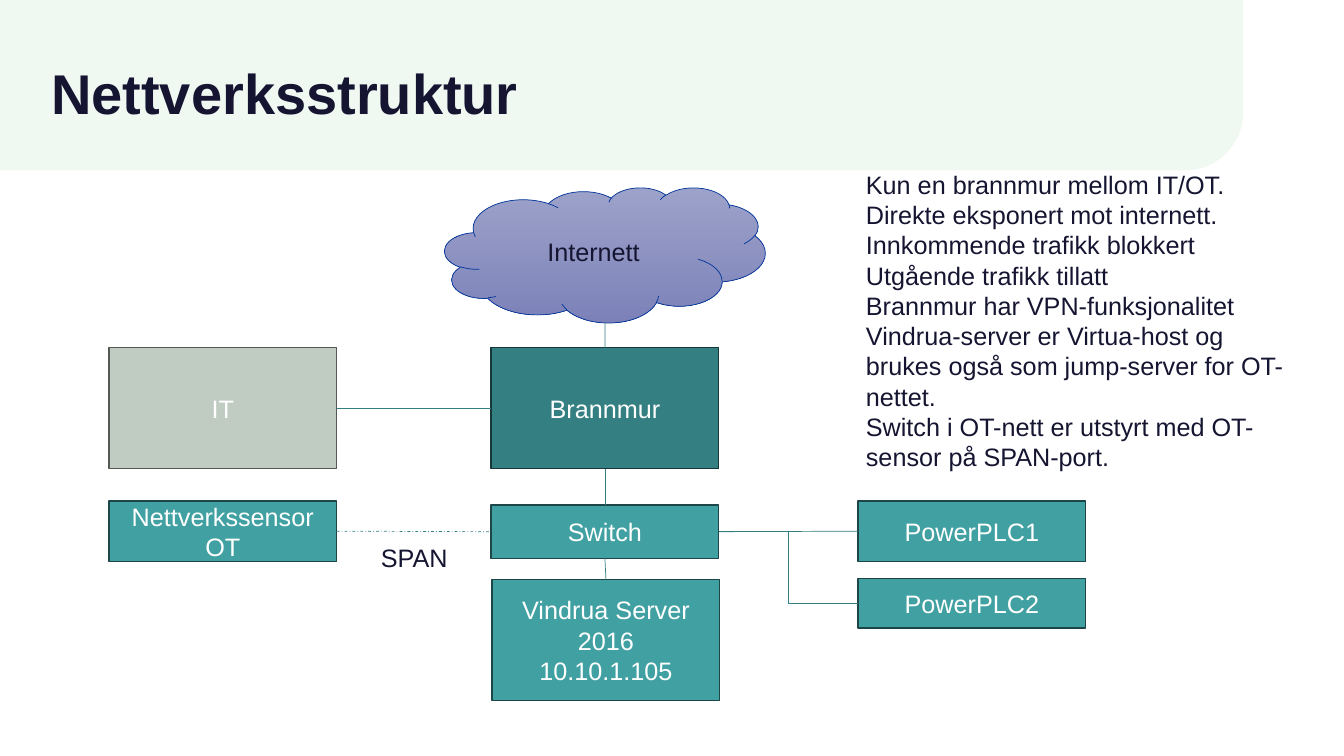
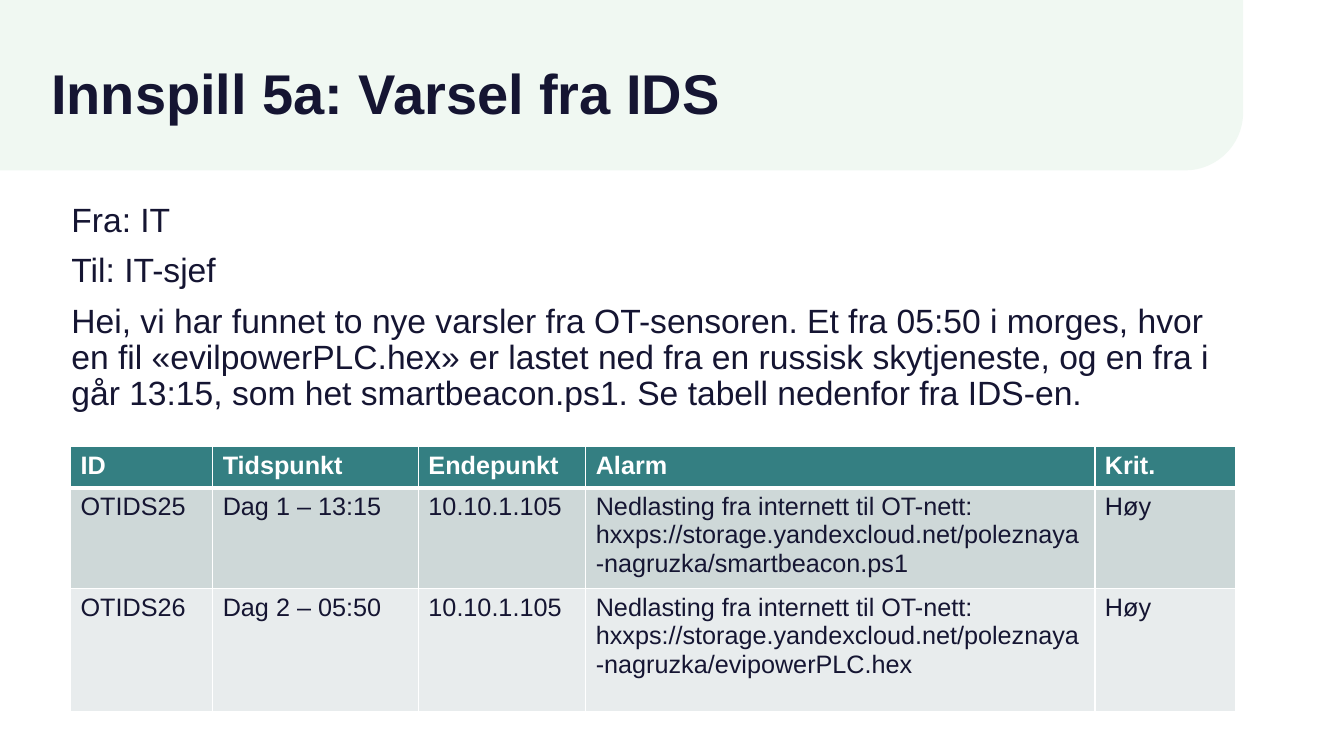
from lxml import etree
from pptx import Presentation
from pptx.dml.color import RGBColor
from pptx.enum.dml import MSO_LINE
from pptx.enum.shapes import MSO_CONNECTOR as CONN, MSO_SHAPE as SHAPE
from pptx.enum.text import MSO_ANCHOR as ANCHOR, PP_ALIGN as ALIGN
from pptx.oxml.ns import qn
from pptx.util import Inches, Pt

FONT = "Arial"
INK, WHITE, MINT = "151532", "FFFFFF", "F0F8F2"
DARK_TEAL, TEAL, GREY = "347F82", "41A0A2", "C0CBC2"
TEAL_EDGE = "1C4647"
ROW_FILLS = ["CED8D8", "E8ECED"]
TOP, LEFT, BOTTOM, RIGHT = range(4)


def rgb(value):
    return RGBColor.from_string(value)


def write(tf, text, size=18, color=INK, bold=False, align=None,
          anchor=ANCHOR.TOP, spacing=None, before=0, indent=0, wrap=True):
    """Fill a text frame, one paragraph per line of text."""
    tf.word_wrap = wrap
    tf.vertical_anchor = anchor
    for i, line in enumerate(text.split("\n")):
        p = tf.paragraphs[0] if i == 0 else tf.add_paragraph()
        if indent:
            p._p.get_or_add_pPr().set("marL", str(Inches(indent)))
        if align is not None:
            p.alignment = align
        if spacing:
            p.line_spacing = spacing
        if before and i:
            p.space_before = Pt(before)
        r = p.add_run()
        r.text = line
        r.font.name = FONT
        r.font.size = Pt(size)
        r.font.bold = bold
        r.font.color.rgb = rgb(color)


def add_text(slide, x, y, w, h, text, **fmt):
    sp = slide.shapes.add_textbox(Inches(x), Inches(y), Inches(w), Inches(h))
    write(sp.text_frame, text, **fmt)
    return sp


def add_shape(slide, kind, x, y, w, h, fill, edge=None, width=1):
    sp = slide.shapes.add_shape(kind, Inches(x), Inches(y), Inches(w), Inches(h))
    sp.shadow.inherit = False
    if isinstance(fill, tuple):
        sp.fill.gradient()
        sp.fill.gradient_angle = 270
        for stop, color, pos in zip(sp.fill.gradient_stops, fill, (0, 1)):
            stop.color.rgb = rgb(color)
            stop.position = pos
    else:
        sp.fill.solid()
        sp.fill.fore_color.rgb = rgb(fill)
    if edge:
        sp.line.color.rgb = rgb(edge)
        sp.line.width = Pt(width)
    else:
        sp.line.fill.background()
    return sp


def add_node(slide, x, y, h, text, fill=TEAL, edge=TEAL_EDGE):
    """Labelled box; all boxes in the network share one width."""
    sp = add_shape(slide, SHAPE.RECTANGLE, x, y, 2.26, h, fill, edge)
    write(sp.text_frame, text, color=WHITE, align=ALIGN.CENTER,
          anchor=ANCHOR.MIDDLE)
    return sp


def add_link(slide, start, side, end, end_side=None, kind=CONN.STRAIGHT, dash=None):
    """Line from a side of a box to a side of another, or to a point."""
    x, y = (0, 0) if end_side is not None else map(Inches, end)
    line = slide.shapes.add_connector(kind, 0, 0, x, y)
    line.begin_connect(start, side)
    if end_side is not None:
        line.end_connect(end, end_side)
    line.line.color.rgb = rgb(DARK_TEAL)
    line.line.width = Pt(0.5)
    if dash:
        line.line.dash_style = dash
    etree.SubElement(line._element.spPr, qn("a:effectLst"))


def add_slide(prs, title):
    """Blank slide with the mint title band."""
    slide = prs.slides.add_slide(prs.slide_layouts[6])
    band = add_shape(slide, SHAPE.ROUND_1_RECTANGLE, 0, 0, 12.33, 1.69, MINT)
    band.adjustments[0] = 0.34
    band._element.spPr.find(qn("a:xfrm")).set("flipV", "1")
    add_text(slide, 0.41, 0.36, 11.85, 1.2, title, size=40, bold=True,
             anchor=ANCHOR.MIDDLE, spacing=0.9)
    return slide


def set_borders(cell, bottom):
    tcPr = cell._tc.get_or_add_tcPr()
    for tag, width in (("lnL", 1), ("lnR", 1), ("lnT", 1), ("lnB", bottom)):
        ln = etree.SubElement(tcPr, qn("a:" + tag), w=str(Pt(width)))
        fill = etree.SubElement(ln, qn("a:solidFill"))
        etree.SubElement(fill, qn("a:srgbClr"), val=WHITE)


def add_table(slide, x, y, widths, heights, rows):
    table = slide.shapes.add_table(
        len(rows), len(widths), Inches(x), Inches(y),
        Inches(sum(widths)), Inches(sum(heights))).table
    for col, width in zip(table.columns, widths):
        col.width = Inches(width)
    for i, (height, texts) in enumerate(zip(heights, rows)):
        table.rows[i].height = Inches(height)
        head = i == 0
        for j, text in enumerate(texts):
            cell = table.cell(i, j)
            set_borders(cell, 3 if head else 1)
            cell.fill.solid()
            cell.fill.fore_color.rgb = rgb(DARK_TEAL if head else ROW_FILLS[(i - 1) % 2])
            write(cell.text_frame, text, color=WHITE if head else INK, bold=head)


def network_slide(prs):
    slide = add_slide(prs, "Nettverksstruktur")

    # Boxes, by column
    left, middle, right = 1.08, 4.87, 8.51
    cloud = add_shape(slide, SHAPE.CLOUD, 4.41, 1.86, 3.18, 1.34,
                      ("9DA2CA", "7C82B8"), "003499", 0.5)
    write(cloud.text_frame, "Internett", align=ALIGN.CENTER, anchor=ANCHOR.MIDDLE)
    firewall = add_node(slide, middle, 3.45, 1.2, "Brannmur", DARK_TEAL, "173839")
    it = add_node(slide, left, 3.45, 1.2, "IT", GREY, "545955")
    server = add_node(slide, middle + 0.01, 5.75, 1.2,
                      "Vindrua Server 2016\n10.10.1.105")
    switch = add_node(slide, middle, 5.01, 0.53, "Switch")
    plc1 = add_node(slide, right, 4.97, 0.6, "PowerPLC1")
    plc2 = add_node(slide, right, 5.74, 0.49, "PowerPLC2")
    sensor = add_node(slide, left, 4.97, 0.6, "Nettverkssensor OT")

    # Links
    add_link(slide, firewall, TOP, (6, 3.2))
    add_link(slide, switch, TOP, firewall, BOTTOM)
    add_link(slide, server, TOP, switch, BOTTOM)
    add_link(slide, it, RIGHT, firewall, LEFT)
    add_link(slide, plc1, LEFT, switch, RIGHT)
    add_link(slide, plc2, LEFT, switch, RIGHT, kind=CONN.ELBOW)
    add_link(slide, sensor, RIGHT, switch, LEFT, dash=MSO_LINE.DASH_DOT)

    # Notes beside the diagram
    add_text(slide, 3.68, 5.33, 0.87, 0.4, "SPAN", wrap=False)
    add_text(slide, 8.49, 1.63, 4.56, 3.13, "\n".join([
        "Kun en brannmur mellom IT/OT.",
        "Direkte eksponert mot internett.",
        "Innkommende trafikk blokkert",
        "Utgående trafikk tillatt",
        "Brannmur har VPN-funksjonalitet",
        "Vindrua-server er Virtua-host og brukes også som "
        "jump-server for OT-nettet.",
        "Switch i OT-nett er utstyrt med OT-sensor på SPAN-port.",
    ]))


def alert_slide(prs):
    slide = add_slide(prs, "Innspill 5a: Varsel fra IDS")
    add_text(slide, 0.41, 1.97, 11.85, 2.4, "\n".join([
        "Fra: IT",
        "Til: IT-sjef",
        "Hei, vi har funnet to nye varsler fra OT-sensoren. Et fra 05:50 i "
        "morges, hvor en fil «evilpowerPLC.hex» er lastet ned fra en russisk "
        "skytjeneste, og en fra i går 13:15, som het smartbeacon.ps1. "
        "Se tabell nedenfor fra IDS-en.",
    ]), size=24, spacing=0.9, before=10, indent=0.2)

    # Alerts from the IDS
    alarm = ("Nedlasting fra internett til OT-nett: "
             "hxxps://storage.yandexcloud.net/poleznaya-nagruzka/")
    add_table(slide, 0.7, 4.43, [1.41, 2.04, 1.66, 5.05, 1.4], [0.41, 0.94, 1.22], [
        ["ID", "Tidspunkt", "Endepunkt", "Alarm", "Krit."],
        ["OTIDS25", "Dag 1 – 13:15", "10.10.1.105", alarm + "smartbeacon.ps1", "Høy"],
        ["OTIDS26", "Dag 2 – 05:50", "10.10.1.105", alarm + "evipowerPLC.hex", "Høy"],
    ])


def main():
    prs = Presentation()
    prs.slide_width, prs.slide_height = Inches(13.33), Inches(7.5)
    network_slide(prs)
    alert_slide(prs)
    prs.save("out.pptx")


if __name__ == "__main__":
    main()
